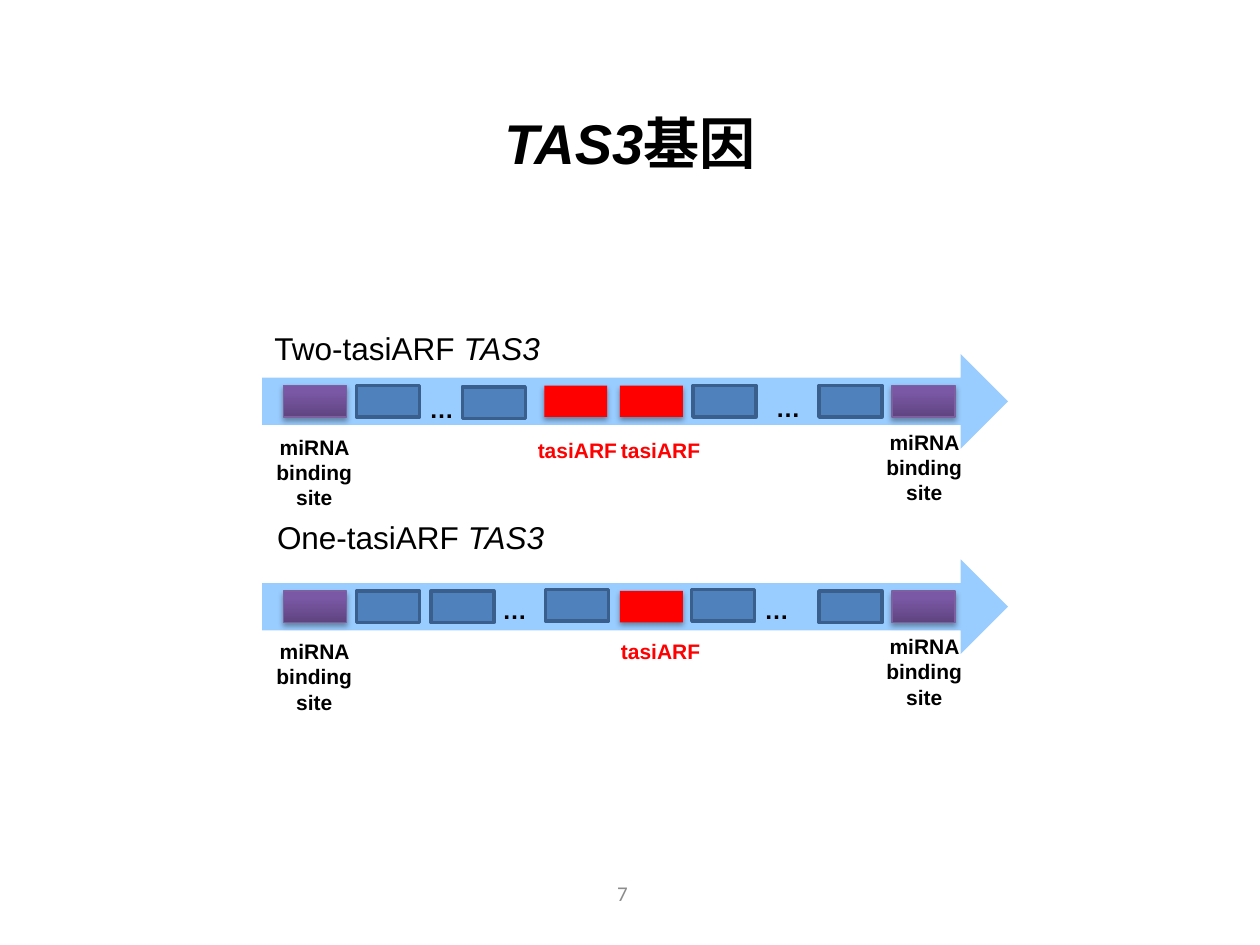
from lxml import etree
from pptx import Presentation
from pptx.dml.color import RGBColor
from pptx.enum.shapes import MSO_SHAPE
from pptx.enum.text import MSO_ANCHOR, PP_ALIGN
from pptx.oxml.ns import qn
from pptx.util import Inches, Pt

ARROW, RECT = MSO_SHAPE.RIGHT_ARROW, MSO_SHAPE.RECTANGLE
LEFT, CENTER, RIGHT = PP_ALIGN.LEFT, PP_ALIGN.CENTER, PP_ALIGN.RIGHT
TOP, MIDDLE = MSO_ANCHOR.TOP, MSO_ANCHOR.MIDDLE

BLACK, RED, GREY = "000000", "FF0000", "8C8C8C"
ARROW_BLUE, SEGMENT_BLUE, SEGMENT_EDGE = "99CCFF", "4F81BD", "3A5F8C"
SITE_DARK, SITE_LIGHT, SITE_EDGE = "5F4480", "7B58A6", "7D60A0"

GENE_LEFT, GENE_WIDTH, GENE_HEIGHT = 2.08, 5.92, 0.75
BOX_WIDTH, BOX_HEIGHT = 0.5, 0.25
SITE_LEFTS = (2.25, 7.08)

GENES = [
    {"name": "Two-tasiARF ", "name_at": (2.08, 2.56), "top": 2.81,
     "segments": [(2.83, 3.06), (3.67, 3.07), (5.5, 3.06), (6.5, 3.06)],
     "tasi": [(4.32, 4.17), (4.92, 4.83)], "tasi_label_top": 3.42,
     "dots": [(5.92, 3.07), (3.17, 3.08)],
     "site_labels": [(2.08, 3.4), (6.92, 3.36)]},
    {"name": "One-tasiARF ", "name_at": (2.1, 4.06), "top": 4.44,
     "segments": [(2.83, 4.69), (3.42, 4.69), (4.33, 4.68), (5.49, 4.68), (6.5, 4.69)],
     "tasi": [(4.92, 4.83)], "tasi_label_top": 5.02,
     "dots": [(5.83, 4.67), (3.75, 4.67)],
     "site_labels": [(2.08, 5.02), (6.92, 4.98)]},
]


def color(hex_code):
    """Return the RGB colour for a hex string."""
    return RGBColor.from_string(hex_code)


def add_text(slide, left, top, width, height, paragraphs, size=12, font="Arial",
             hex_code=BLACK, bold=False, align=LEFT, anchor=TOP):
    """Add a text box; each paragraph is a list of (text, italic) runs."""
    box = slide.shapes.add_textbox(Inches(left), Inches(top), Inches(width), Inches(height))
    frame = box.text_frame
    frame.word_wrap = True
    frame.vertical_anchor = anchor
    for index, runs in enumerate(paragraphs):
        paragraph = frame.add_paragraph() if index else frame.paragraphs[0]
        paragraph.alignment = align
        for text, italic in runs:
            run = paragraph.add_run()
            run.text = text
            run.font.name = font
            run.font.size = Pt(size)
            run.font.bold = bold
            run.font.italic = italic
            run.font.color.rgb = color(hex_code)


def add_block(slide, preset, left, top, width=BOX_WIDTH, height=BOX_HEIGHT,
              fill=None, edge=None, edge_width=0):
    """Add a flat shape with an optional solid fill and outline."""
    block = slide.shapes.add_shape(preset, Inches(left), Inches(top), Inches(width), Inches(height))
    block.shadow.inherit = False
    if fill:
        block.fill.solid()
        block.fill.fore_color.rgb = color(fill)
    if edge:
        block.line.color.rgb = color(edge)
        block.line.width = Pt(edge_width)
    else:
        block.line.fill.background()
    return block


def add_shadow(block):
    """Give a block a soft shadow that falls straight down."""
    effects = block._element.spPr.find(qn("a:effectLst"))
    shadow = etree.SubElement(effects, qn("a:outerShdw"), blurRad=str(Pt(3.1)),
                              dist=str(Pt(1.8)), dir="5400000", rotWithShape="0")
    shade = etree.SubElement(shadow, qn("a:srgbClr"), val=BLACK)
    etree.SubElement(shade, qn("a:alpha"), val="35000")


def add_binding_site(slide, left, top):
    """Add a purple miRNA binding site, darker at the bottom."""
    site = add_block(slide, RECT, left, top, edge=SITE_EDGE, edge_width=0.75)
    site.fill.gradient()
    site.fill.gradient_angle = 90
    for stop, position, hex_code in zip(site.fill.gradient_stops, (0, 0.8), (SITE_DARK, SITE_LIGHT)):
        stop.position = position
        stop.color.rgb = color(hex_code)
    add_shadow(site)


def add_gene(slide, gene):
    """Add one gene arrow with its segments and labels."""
    box_top = gene["top"] + (GENE_HEIGHT - BOX_HEIGHT) / 2
    add_block(slide, ARROW, GENE_LEFT, gene["top"], GENE_WIDTH, GENE_HEIGHT, fill=ARROW_BLUE)
    for left in SITE_LEFTS:
        add_binding_site(slide, left, box_top)
    for left, top in gene["segments"]:
        add_block(slide, RECT, left, top, fill=SEGMENT_BLUE, edge=SEGMENT_EDGE, edge_width=2)
    for left, label_left in gene["tasi"]:
        add_shadow(add_block(slide, RECT, left, box_top, fill=RED))
        add_text(slide, label_left, gene["tasi_label_top"], 0.83, 0.3,
                 [[("tasiARF", False)]], hex_code=RED, bold=True)
    for left, top in gene["dots"]:
        add_text(slide, left, top, 0.67, 0.33, [[("…", False)]], size=14, bold=True, align=CENTER)
    for left, top in gene["site_labels"]:
        add_text(slide, left, top, 0.83, 0.71,
                 [[("miRNA binding", False)], [("site", False)]], bold=True, align=CENTER)
    add_text(slide, *gene["name_at"], 2.75, 0.4, [[(gene["name"], False), ("TAS3", True)]], size=18)


def main():
    """Build the TAS3 gene slide and save it."""
    deck = Presentation()
    deck.slide_width, deck.slide_height = Inches(10), Inches(7.5)
    slide = deck.slides.add_slide(deck.slide_layouts[6])
    add_text(slide, 0.33, 0.5, 9.34, 1.25, [[("TAS3", True), ("基因", False)]],
             size=32, bold=True, align=CENTER, anchor=MIDDLE)
    add_text(slide, 4.58, 6.83, 0.5, 0.52, [[("7", False)]], font="Calibri",
             hex_code=GREY, align=RIGHT, anchor=MIDDLE)
    for gene in GENES:
        add_gene(slide, gene)
    deck.save("out.pptx")


if __name__ == "__main__":
    main()
